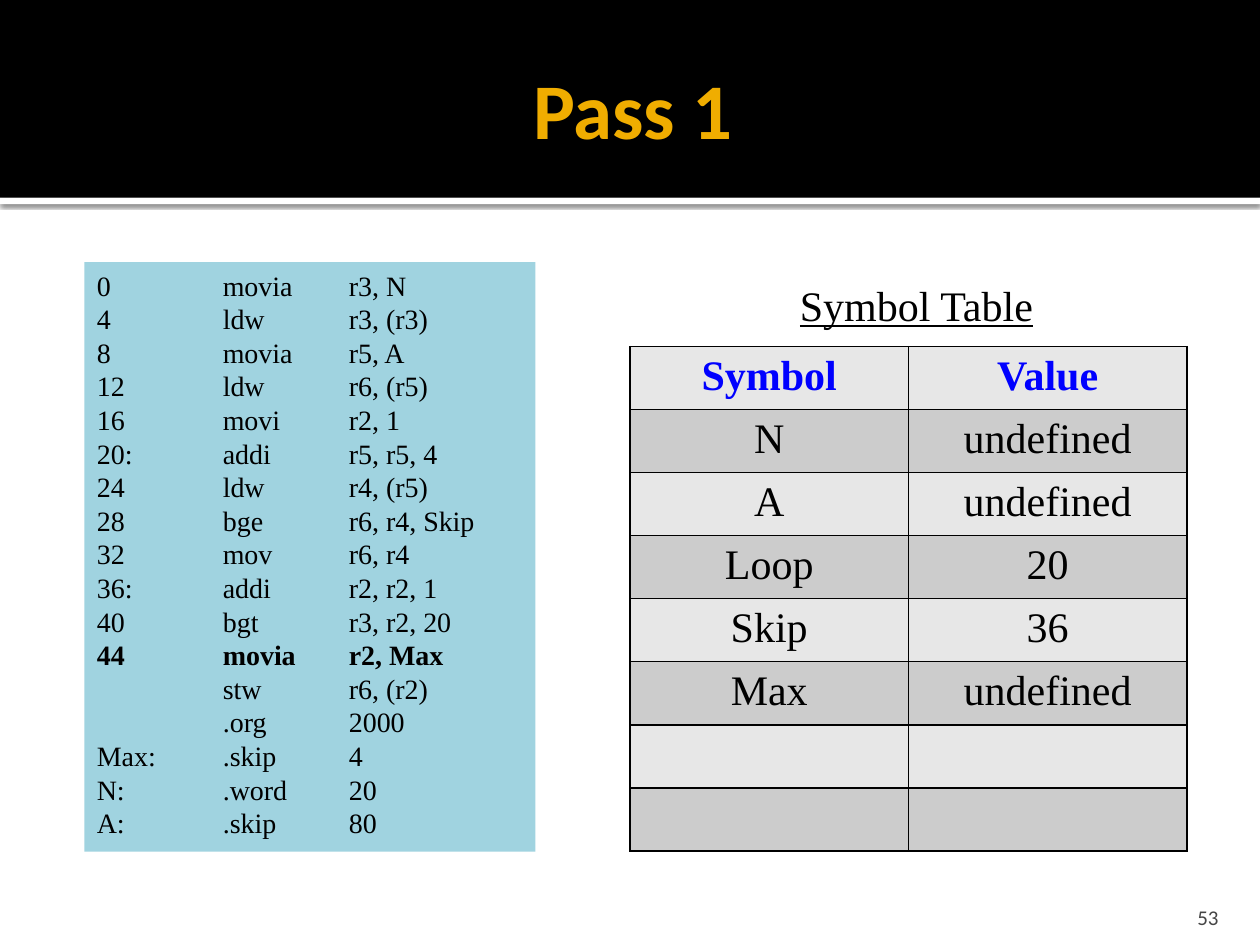
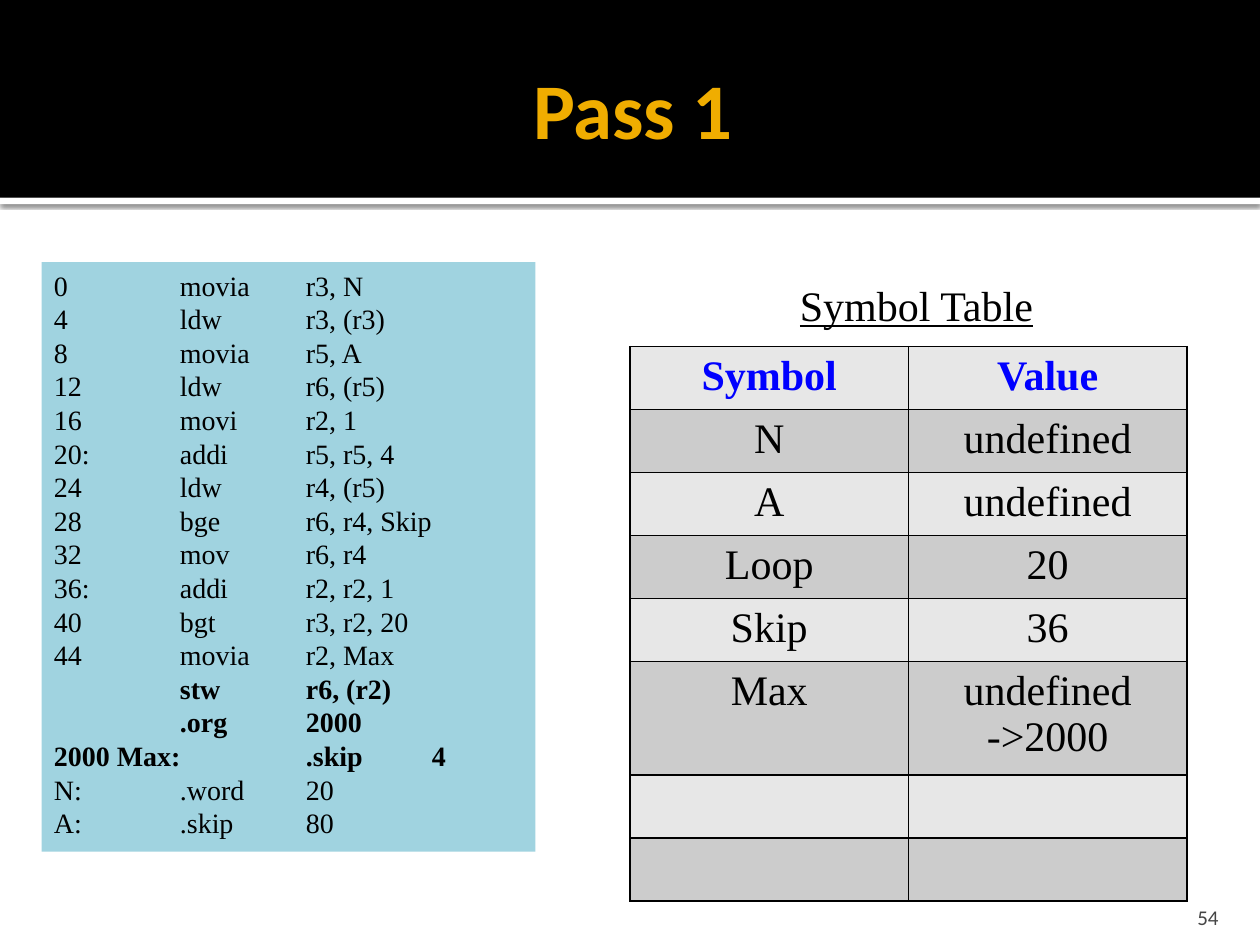
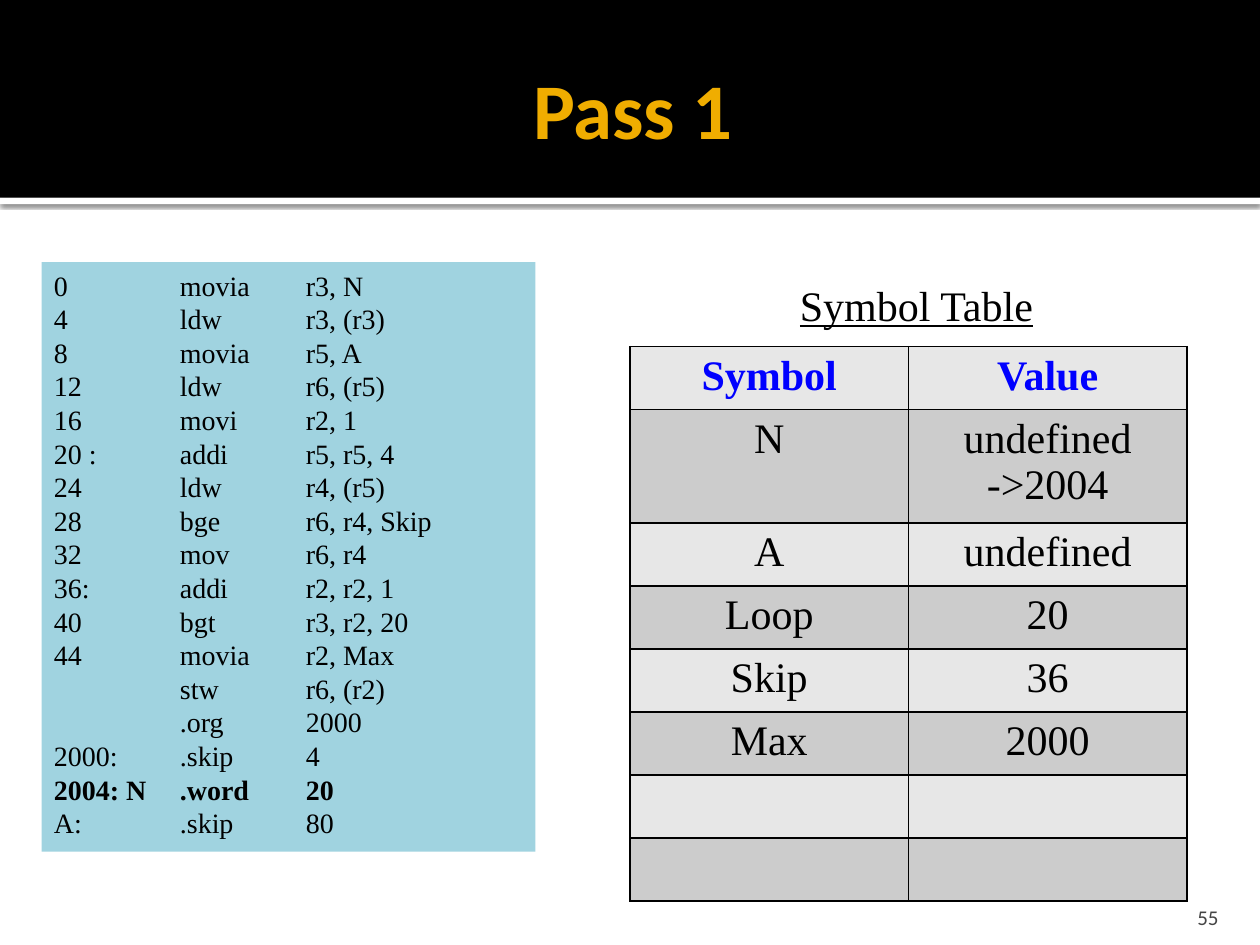
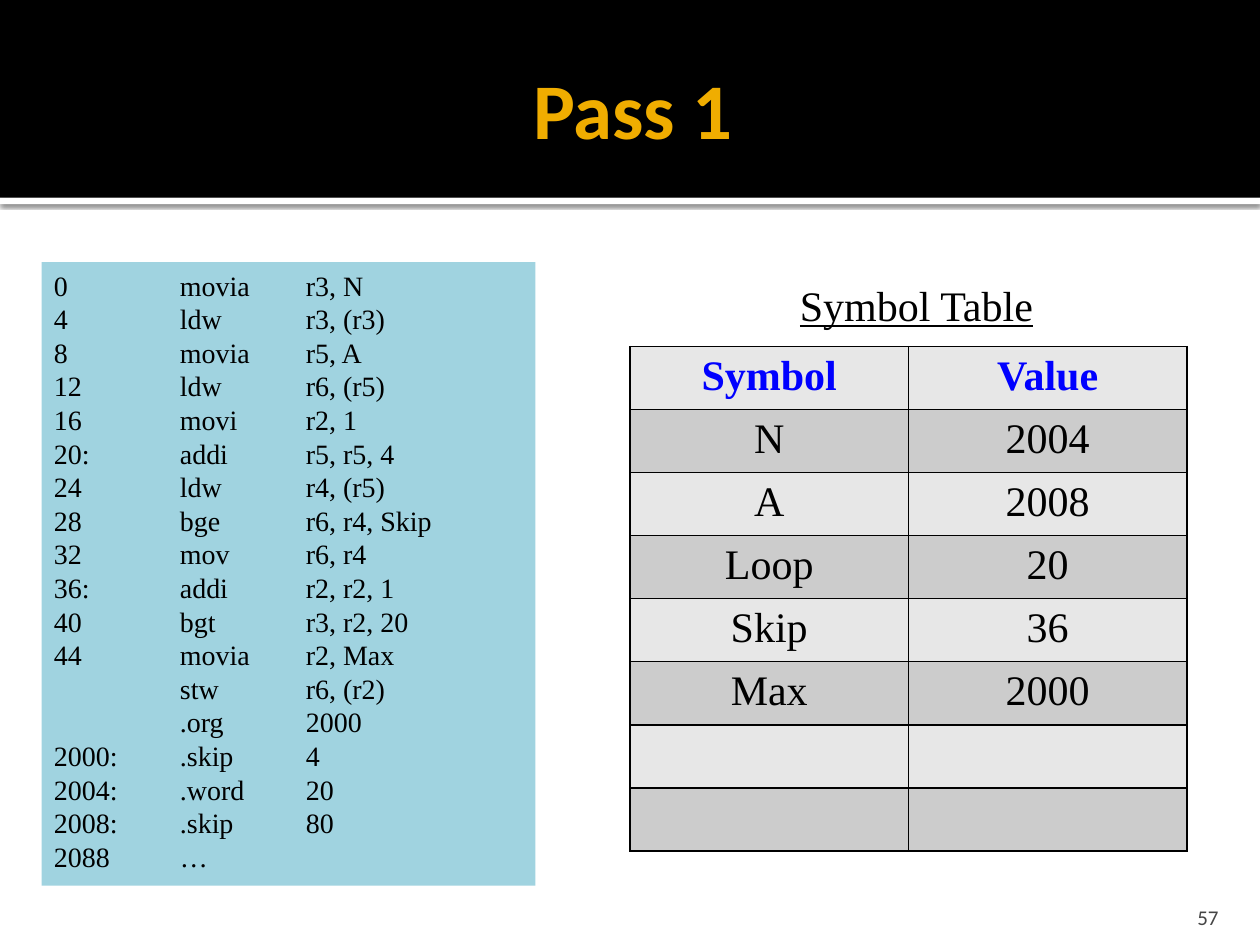
from lxml import etree
from pptx import Presentation
from pptx.dml.color import RGBColor
from pptx.enum.shapes import MSO_SHAPE
from pptx.enum.text import MSO_ANCHOR, PP_ALIGN
from pptx.oxml import parse_xml
from pptx.oxml.ns import qn
from pptx.util import Inches, Pt

RECT = MSO_SHAPE.RECTANGLE
LEFT, CENTER, RIGHT = PP_ALIGN.LEFT, PP_ALIGN.CENTER, PP_ALIGN.RIGHT
TOP, MIDDLE, BOTTOM = MSO_ANCHOR.TOP, MSO_ANCHOR.MIDDLE, MSO_ANCHOR.BOTTOM
NS = 'xmlns:a="http://schemas.openxmlformats.org/drawingml/2006/main"'

# Palette and type
BLACK, WHITE, GOLD, GREY = "000000", "FFFFFF", "F0AD00", "454545"
CODE_BLUE, HEADING_BLUE = "A0D3E0", "0000FF"
ROW_FILLS = ["E7E7E7", "CCCCCC"]
SANS, SERIF = "Calibri", "Times New Roman"
TITLE = {"size": Pt(45), "name": SANS, "bold": True}
NUMBER = {"size": Pt(12), "name": SANS}
CODE = {"size": Pt(16), "name": SERIF}
SYMBOL = {"size": Pt(24), "name": SERIF}

# Slide grid, in inches
WIDTH, HEIGHT = 10, 7.5
BAND_HEIGHT, RULE_HEIGHT = 1.57, 0.05
CODE_TOP, CODE_RIGHT, CODE_LINE = 2.08, 4.25, 0.27
CODE_TABS = [1, 2, 3]
TABLE_LEFT, TABLE_TOP, COLUMN, ROW = 5, 2.75, 2.21, 0.5

# Program listing: the lines every slide shares, then what changes
SHARED_CODE = [
    "0\tmovia\tr3, N", "4\tldw\tr3, (r3)", "8\tmovia\tr5, A",
    "12\tldw\tr6, (r5)", "16\tmovi\tr2, 1", "20:\taddi\tr5, r5, 4",
    "24\tldw\tr4, (r5)", "28\tbge\tr6, r4, Skip", "32\tmov\tr6, r4",
    "36:\taddi\tr2, r2, 1", "40\tbgt\tr3, r2, 20", "44\tmovia\tr2, Max",
    "\tstw\tr6, (r2)", "\t.org\t2000",
]
SYMBOLS = ["N", "A", "Loop", "Skip", "Max"]
STEPS = [
    {"number": 53, "code_left": 0.67, "bold_lines": [11],
     "data": ["Max:\t.skip\t4", "N:\t.word\t20", "A:\t.skip\t80"],
     "values": ["undefined", "undefined", "20", "36", "undefined"]},
    {"number": 54, "code_left": 0.33, "bold_lines": [12, 13, 14],
     "data": ["2000 Max:\t.skip\t4", "N:\t.word\t20", "A:\t.skip\t80"],
     "values": ["undefined", "undefined", "20", "36", "undefined ->2000"]},
    {"number": 55, "code_left": 0.33, "bold_lines": [15],
     "data": ["2000:\t.skip\t4", "2004: N\t.word\t20", "A:\t.skip\t80"],
     "values": ["undefined ->2004", "undefined", "20", "36", "2000"]},
    {"number": 57, "code_left": 0.33, "bold_lines": [],
     "data": ["2000:\t.skip\t4", "2004:\t.word\t20", "2008:\t.skip\t80", "2088\t…"],
     "values": ["2004", "2008", "20", "36", "2000"]},
]


def rgb(value):
    return RGBColor.from_string(value)


def write(frame, lines, style, color, align=LEFT, anchor=TOP, bold_lines=()):
    """Fill a text frame with one formatted paragraph per line."""
    frame.vertical_anchor = anchor
    for index, line in enumerate(lines):
        paragraph = frame.add_paragraph() if index else frame.paragraphs[0]
        paragraph.alignment = align
        run = paragraph.add_run()
        run.text = line
        for attribute, value in style.items():
            setattr(run.font, attribute, value)
        run.font.color.rgb = rgb(color)
        if index in bold_lines:
            run.font.bold = True


prs = Presentation()
prs.slide_width, prs.slide_height = Inches(WIDTH), Inches(HEIGHT)
layout = prs.slide_layouts[5]

for step_index, step in enumerate(STEPS):
    slide = prs.slides.add_slide(layout)

    # Header band and its shadowed rule, moved to the shared layout
    if step_index == 0:
        bands = [(BAND_HEIGHT, RULE_HEIGHT, WHITE), (0, BAND_HEIGHT, BLACK)]
        for position, (top, height, color) in enumerate(bands):
            band = slide.shapes.add_shape(
                RECT, 0, Inches(top), Inches(WIDTH), Inches(height))
            band.fill.solid()
            band.fill.fore_color.rgb = rgb(color)
            band.line.fill.background()
            band.shadow.inherit = False
            if color == WHITE:
                band.element.spPr.find(qn("a:effectLst")).append(parse_xml(
                    f'<a:outerShdw {NS} blurRad="{Pt(2.5)}" dist="{Pt(0.8)}" '
                    f'dir="5400000"><a:srgbClr val="{BLACK}">'
                    '<a:alpha val="60000"/></a:srgbClr></a:outerShdw>'))
            layout.shapes.element.insert(2 + position, band.element)

    # Title
    title = slide.shapes.title
    title.left, title.top = Inches(0.5), Inches(0.17)
    title.width, title.height = Inches(9), Inches(1.37)
    title.text_frame.margin_right = Inches(0.05)
    write(title.text_frame, ["Pass 1"], TITLE, GOLD, CENTER, MIDDLE)

    # Slide number
    number = slide.shapes.add_textbox(
        Inches(8.97), Inches(7.08), Inches(0.8), Inches(0.3)).text_frame
    number.word_wrap = True
    number.margin_bottom = 0
    write(number, [str(step["number"])], NUMBER, GREY, RIGHT, BOTTOM)

    # Program listing, in columns set by tab stops
    code = SHARED_CODE + step["data"]
    if step["number"] == 55:
        code[5] = code[5].replace("20:", "20 :")
    listing = slide.shapes.add_shape(
        RECT, Inches(step["code_left"]), Inches(CODE_TOP),
        Inches(CODE_RIGHT - step["code_left"]),
        Inches(0.09 + CODE_LINE * len(code)))
    listing.fill.solid()
    listing.fill.fore_color.rgb = rgb(CODE_BLUE)
    listing.line.fill.background()
    listing.shadow.inherit = False
    write(listing.text_frame, code, CODE, BLACK, bold_lines=step["bold_lines"])
    for paragraph in listing.text_frame.paragraphs:
        stops = etree.SubElement(paragraph._p.get_or_add_pPr(), qn("a:tabLst"))
        for stop in CODE_TABS:
            etree.SubElement(stops, qn("a:tab"), pos=str(Inches(stop)), algn="l")

    # Symbol table, with two rows left free
    rows = [("Symbol", "Value"), *zip(SYMBOLS, step["values"]), ("", ""), ("", "")]
    table = slide.shapes.add_table(
        len(rows), 2, Inches(TABLE_LEFT), Inches(TABLE_TOP),
        Inches(2 * COLUMN), Inches(ROW * len(rows))).table
    for r, row in enumerate(rows):
        for c, entry in enumerate(row):
            cell = table.cell(r, c)
            cell.fill.solid()
            cell.fill.fore_color.rgb = rgb(ROW_FILLS[r % 2])
            properties = cell._tc.get_or_add_tcPr()
            for position, side in enumerate(["lnL", "lnR", "lnT", "lnB"]):
                border = etree.Element(qn(f"a:{side}"), w=str(Pt(1)))
                solid = etree.SubElement(border, qn("a:solidFill"))
                etree.SubElement(solid, qn("a:srgbClr"), val=BLACK)
                properties.insert(position, border)
            if entry:
                write(cell.text_frame, [entry], {**SYMBOL, "bold": r == 0},
                      BLACK if r else HEADING_BLUE, CENTER)

    # Table caption
    caption = slide.shapes.add_textbox(
        Inches(6.25), Inches(2.17), Inches(2.07), Inches(0.5)).text_frame
    caption.word_wrap = False
    write(caption, ["Symbol Table"], {**SYMBOL, "underline": True}, BLACK)

prs.save("out.pptx")
